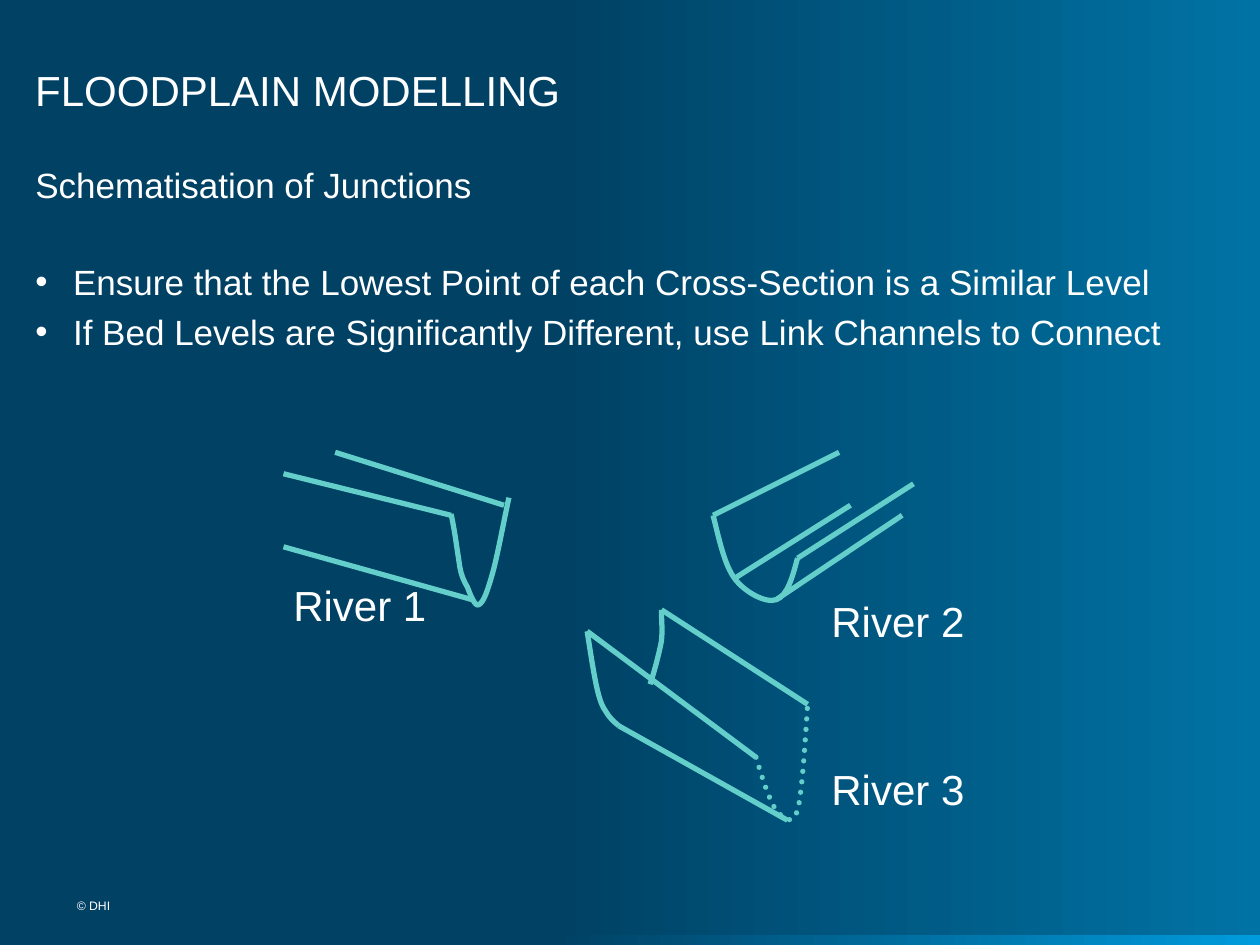
from dataclasses import dataclass

from lxml.etree import SubElement
from pptx import Presentation
from pptx.dml.color import RGBColor
from pptx.enum.dml import MSO_LINE
from pptx.enum.shapes import MSO_CONNECTOR, MSO_SHAPE
from pptx.enum.text import MSO_ANCHOR
from pptx.oxml.ns import qn
from pptx.util import Pt

PX = 9144  # EMU: 100 px to the inch


@dataclass(frozen=True)
class Theme:
    font: str = "Arial"
    text: str = "FFFFFF"
    channel: str = "63CECA"
    deep: str = "004164"
    sea: str = "0073A4"
    bright: str = "009BDC"
    title_size: int = 24
    body_size: int = 20
    footer_size: int = 7
    channel_width: int = 3


THEME = Theme()

# All points are relative to the river's box. A section is a start point, its
# segments (two controls and an end, or an end alone) and whether it is dotted.
RIVERS = [
    {
        "label": "River 1", "box": (225, 359), "label_at": (-2, 96),
        "banks": [((0, 17), (133, 50)), ((41, 0), (175, 42)), ((150, 117), (0, 75))],
        "sections": [((133, 49), [
            ((134, 53), (136, 64), (137, 71)),
            ((138, 78), (139, 84), (140, 91)),
            ((141, 97), (143, 102), (146, 107)),
            ((148, 112), (152, 123), (155, 121)),
            ((159, 119), (162, 110), (166, 96)),
            ((170, 82), (176, 49), (179, 36)),
        ], False)],
    },
    {
        "label": "River 2", "box": (566, 359), "label_at": (84, 109),
        "banks": [((0, 50), (100, 0)), ((67, 84), (159, 25)),
                  ((17, 100), (109, 42)), ((50, 117), (150, 50))],
        "sections": [((0, 50), [
            ((5, 70), (9, 89), (17, 100)),
            ((25, 111), (42, 120), (50, 117)),
            ((59, 114), (63, 99), (67, 84)),
        ], False)],
    },
    {
        "label": "River 3", "box": (466, 484), "label_at": (184, 117),
        "banks": [((0, 17), (134, 117)), ((59, 0), (175, 75))],
        "sections": [
            ((0, 17), [
                ((3, 36), (6, 56), (9, 67)),
                ((12, 78), (14, 79), (17, 84)),
                ((20, 88), (24, 91), (25, 92)),
            ], False),
            ((25, 92), [((159, 167),)], False),
            ((59, 0), [
                ((59, 8), (60, 16), (59, 25)),
                ((57, 35), (54, 47), (50, 59)),
            ], False),
            ((134, 117), [
                ((139, 134), (145, 152), (150, 159)),
                ((156, 166), (163, 172), (167, 159)),
                ((171, 145), (174, 89), (175, 75)),
            ], True),
        ],
    },
]


def emu(*lengths):
    return [round(length * PX) for length in lengths]


def apply(target, formats):
    for name, value in formats.items():
        setattr(target, name, value)


def fill_gradient(fill, start, end):
    fill.gradient()
    fill.gradient_angle = 0
    for stop, position, color in zip(fill.gradient_stops, (0.44, 1), (start, end)):
        stop.position = position
        stop.color.rgb = RGBColor.from_string(color)


def style_text(paragraph, size):
    apply(paragraph.font, {"name": THEME.font, "size": Pt(size)})
    paragraph.font.color.rgb = RGBColor.from_string(THEME.text)


def add_text(slide, box, text, size, margins=(0, 0), wrap=True, anchor=MSO_ANCHOR.TOP):
    frame = slide.shapes.add_textbox(*emu(*box)).text_frame
    side, edge = emu(*margins)
    apply(frame, {"margin_left": side, "margin_right": side, "margin_top": edge,
                  "margin_bottom": edge, "word_wrap": wrap, "vertical_anchor": anchor})
    frame.text = text
    style_text(frame.paragraphs[0], size)
    return frame


def add_backdrop(slide, box):
    """Gradient background with a bright strip along the foot of the box."""
    left, top, width, height = box
    fill_gradient(slide.background.fill, THEME.deep, THEME.sea)
    strip = slide.shapes.add_shape(
        MSO_SHAPE.RECTANGLE, *emu(left, top + height - 8, width, 8))
    fill_gradient(strip.fill, THEME.deep, THEME.bright)
    strip.line.fill.background()
    strip.shadow.inherit = False


def add_body(slide, box, heading, bullets):
    frame = add_text(slide, box, heading, THEME.body_size)
    for index, bullet in enumerate(bullets):
        paragraph = frame.add_paragraph()
        paragraph.text = bullet
        properties = paragraph._p.get_or_add_pPr()
        indent = emu(30)[0]
        properties.set("marL", str(indent))
        properties.set("indent", str(-indent))
        SubElement(properties, qn("a:buFont")).set("typeface", THEME.font)
        SubElement(properties, qn("a:buChar")).set("char", "•")
        paragraph.space_before = Pt(4.5 if index else 31.5)
        style_text(paragraph, THEME.body_size)


def style_channel(line):
    line.color.rgb = RGBColor.from_string(THEME.channel)
    line.width = Pt(THEME.channel_width)


def bend(outline, segments):
    """Merge the three straight steps of each curved segment into a Bezier."""
    steps = iter(outline._element.findall(".//" + qn("a:lnTo")))
    for segment in segments:
        straight = [next(steps) for _ in segment]
        if len(segment) == 3:
            path = straight[0].getparent()
            curve = SubElement(path, qn("a:cubicBezTo"))
            for step in straight:
                curve.append(step[0])
                path.remove(step)


def add_section(channel, place, start, segments, dotted):
    builder = channel.build_freeform(*place(start))
    builder.add_line_segments(
        [place(point) for segment in segments for point in segment], close=False)
    section = builder.convert_to_shape()
    bend(section, segments)
    section.fill.background()
    section.shadow.inherit = False
    style_channel(section.line)
    if dotted:
        section.line.dash_style = MSO_LINE.ROUND_DOT
        section.line._get_or_add_ln().set("cap", "rnd")


def add_river(slide, box, river):
    left, top = box

    def place(point):
        return emu(left + point[0], top + point[1])

    channel = slide.shapes.add_group_shape().shapes
    for section in river["sections"]:
        add_section(channel, place, *section)
    for start, end in river["banks"]:
        bank = channel.add_connector(MSO_CONNECTOR.STRAIGHT, *place(start), *place(end))
        style_channel(bank.line)
        SubElement(bank._element.spPr, qn("a:effectLst"))
    add_text(slide, (*(a + b for a, b in zip(box, river["label_at"])), 126, 50),
             river["label"], THEME.title_size, margins=(10, 5), wrap=False)


def main():
    deck = Presentation()
    deck.slide_width, deck.slide_height = emu(1000, 750)
    slide = deck.slides.add_slide(deck.slide_layouts[6])
    add_backdrop(slide, (0, 0, 1000, 750))
    add_text(slide, (28, 25, 860, 66), "FLOODPLAIN MODELLING", THEME.title_size,
             anchor=MSO_ANCHOR.BOTTOM)
    add_body(slide, (28, 130, 945, 560), "Schematisation of Junctions", [
        "Ensure that the Lowest Point of each Cross-Section is a Similar Level",
        "If Bed Levels are Significantly Different, use Link Channels to Connect",
    ])
    for river in RIVERS:
        add_river(slide, river["box"], river)
    add_text(slide, (61, 713, 155, 19), "© DHI", THEME.footer_size)
    deck.save("out.pptx")


if __name__ == "__main__":
    main()
